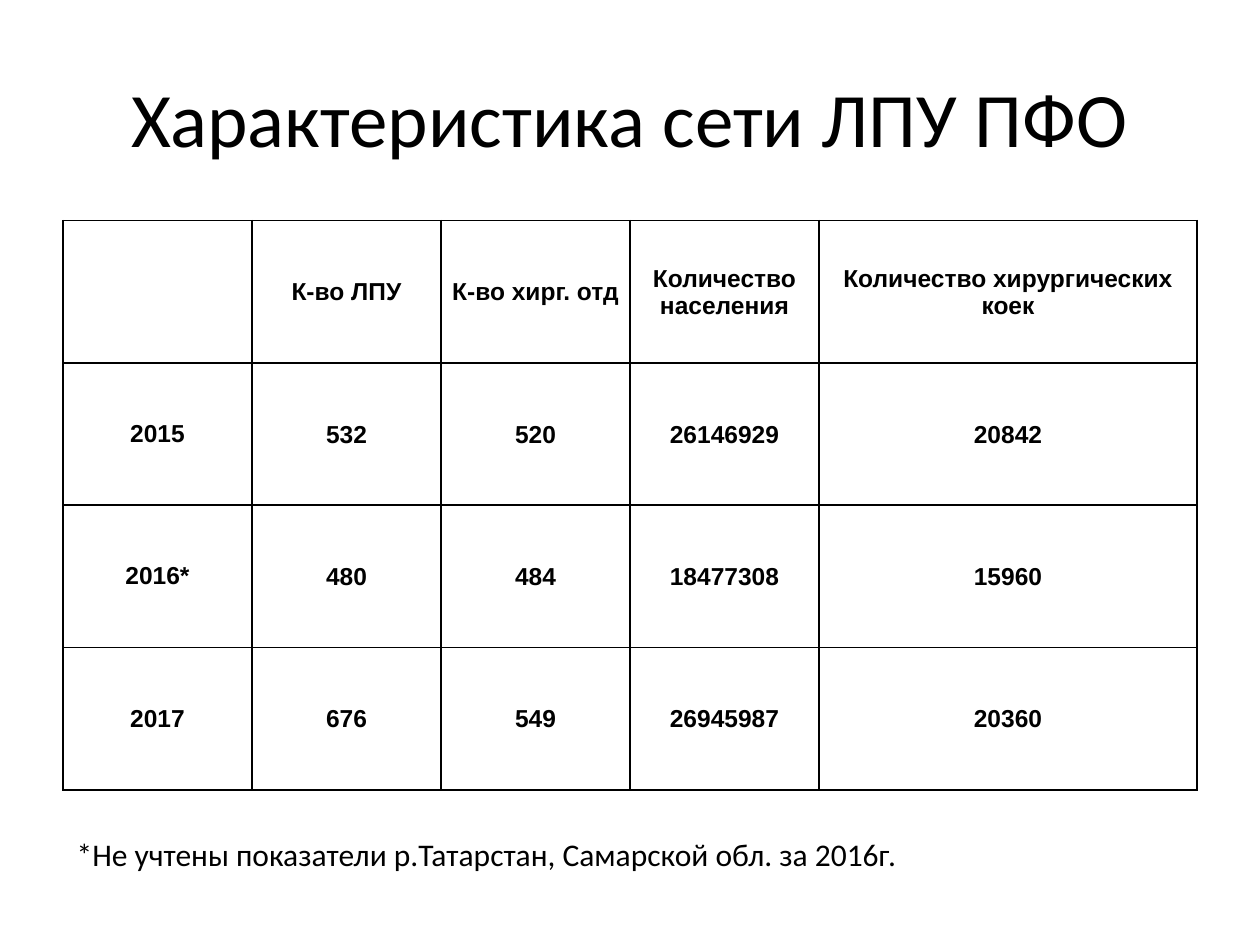
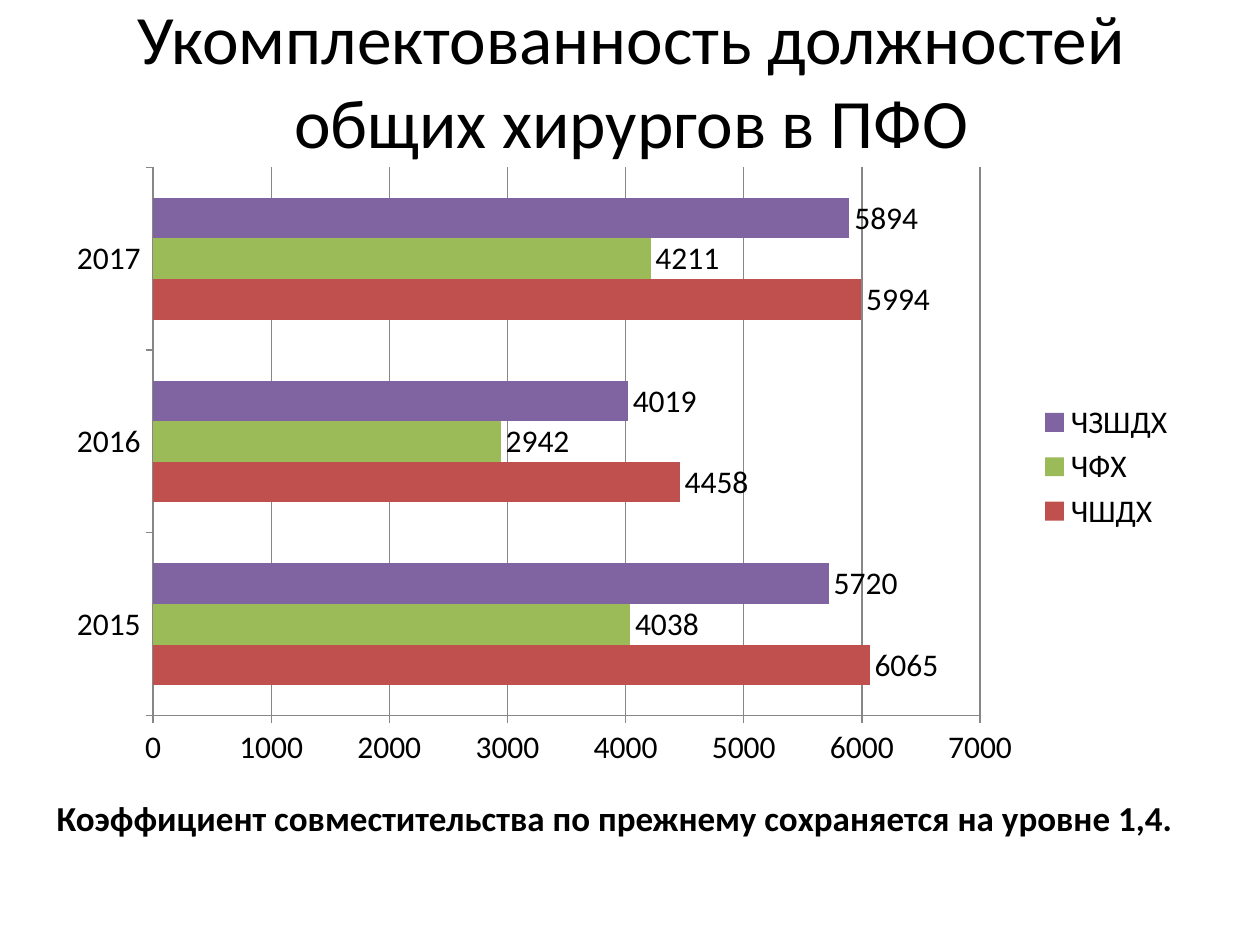
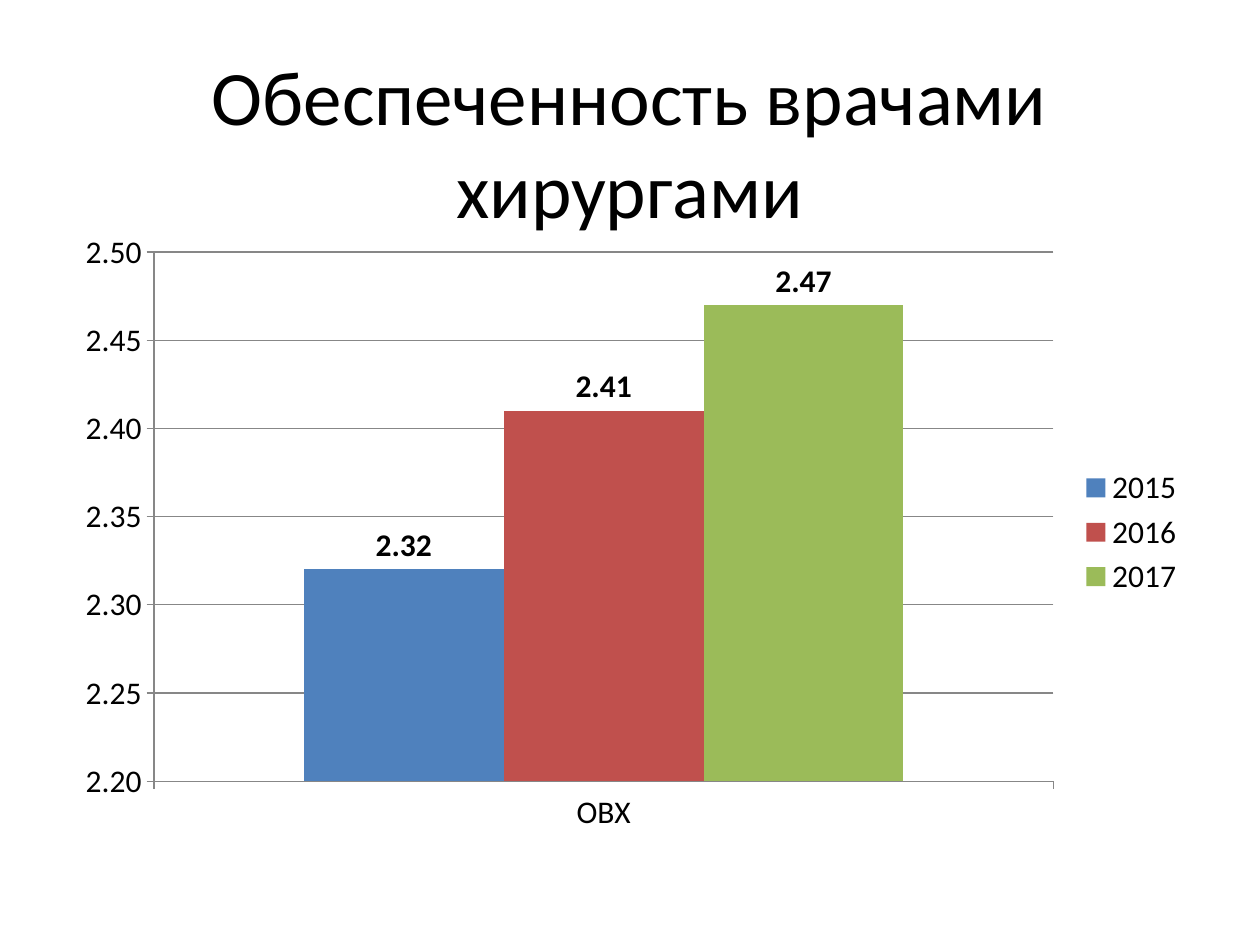
"""Build three slides on the surgical service: a table of the network and two staffing charts."""
from dataclasses import dataclass
from typing import Optional

from lxml.etree import SubElement
from pptx import Presentation
from pptx.chart.data import CategoryChartData
from pptx.dml.color import RGBColor
from pptx.enum.chart import XL_CHART_TYPE as ChartType
from pptx.enum.chart import XL_LABEL_POSITION as LabelPosition
from pptx.enum.chart import XL_LEGEND_POSITION as LegendPosition
from pptx.enum.chart import XL_TICK_MARK as TickMark
from pptx.enum.text import MSO_ANCHOR as Anchor
from pptx.enum.text import PP_ALIGN as Align
from pptx.oxml.ns import qn
from pptx.util import Inches, Pt


@dataclass(frozen=True)
class Theme:
    font: str = "Calibri"
    table_font: str = "Arial"
    ink: str = "000000"
    paper: str = "FFFFFF"
    axis: str = "878787"
    blue: str = "4F81BD"
    red: str = "C0504D"
    green: str = "9BBB59"
    purple: str = "8064A2"
    title: float = 44
    long_title: float = 39.6
    remark: float = 20
    body: float = 18
    cell: float = 14
    border: float = 1
    hairline: float = 0.75


THEME = Theme()


@dataclass(frozen=True)
class Area:
    left: float
    top: float
    width: float
    height: float

    def lengths(self) -> tuple:
        return tuple(map(Inches, (self.left, self.top, self.width, self.height)))


@dataclass(frozen=True)
class Caption:
    text: str
    area: Area
    size: float
    bold: bool = False
    align: Align = Align.LEFT
    anchor: Anchor = Anchor.TOP


@dataclass(frozen=True)
class Series:
    name: str
    values: tuple
    color: str


@dataclass(frozen=True)
class ChartPlan:
    kind: ChartType
    area: Area
    categories: tuple
    series: tuple
    number_format: str
    scale: tuple
    bold_labels: bool = False


@dataclass(frozen=True)
class TablePlan:
    area: Area
    column_widths: tuple
    rows: tuple


@dataclass(frozen=True)
class PagePlan:
    title: Caption
    table: Optional[TablePlan] = None
    chart: Optional[ChartPlan] = None
    note: Optional[Caption] = None


def title(text: str, area: Area, size: float = THEME.title) -> Caption:
    return Caption(text, area, size, align=Align.CENTER, anchor=Anchor.MIDDLE)


def style_font(font, size: float, bold: bool = False, name: str = THEME.font) -> None:
    font.name, font.size, font.bold = name, Pt(size), bold
    font.color.rgb = RGBColor.from_string(THEME.ink)


def draw_caption(page, caption: Caption) -> None:
    frame = page.shapes.add_textbox(*caption.area.lengths()).text_frame
    frame.word_wrap = True
    frame.vertical_anchor = caption.anchor
    frame.text = caption.text
    para = frame.paragraphs[0]
    para.alignment = caption.align
    style_font(para.runs[0].font, caption.size, caption.bold)


def draw_borders(cell) -> None:
    properties = cell._tc.get_or_add_tcPr()
    for position, side in enumerate(("a:lnL", "a:lnR", "a:lnT", "a:lnB")):
        line = SubElement(properties, qn(side), w=str(Pt(THEME.border)))
        fill = SubElement(line, qn("a:solidFill"))
        SubElement(fill, qn("a:srgbClr"), val=THEME.ink)
        properties.insert(position, line)


def draw_table(page, plan: TablePlan) -> None:
    table = page.shapes.add_table(
        len(plan.rows), len(plan.column_widths), *plan.area.lengths()).table
    table.first_row = table.horz_banding = False
    for column, width in zip(table.columns, plan.column_widths):
        column.width = Inches(width)
    for row_index, row in enumerate(plan.rows):
        for column_index, text in enumerate(row):
            cell = table.cell(row_index, column_index)
            cell.fill.solid()
            cell.fill.fore_color.rgb = RGBColor.from_string(THEME.paper)
            draw_borders(cell)
            cell.vertical_anchor = Anchor.MIDDLE
            if column_index:
                cell.margin_left = cell.margin_right = cell.margin_top = Inches(0.01)
                cell.margin_bottom = Inches(0)
            cell.text_frame.text = text
            para = cell.text_frame.paragraphs[0]
            para.alignment = Align.CENTER
            for span in para.runs:
                style_font(span.font, THEME.cell, True, THEME.table_font)


def style_line(line) -> None:
    line.color.rgb = RGBColor.from_string(THEME.axis)
    line.width = Pt(THEME.hairline)


def draw_chart(page, plan: ChartPlan) -> None:
    data = CategoryChartData(number_format=plan.number_format)
    data.categories = plan.categories
    for series in plan.series:
        data.add_series(series.name, series.values)
    chart = page.shapes.add_chart(plan.kind, *plan.area.lengths(), data).chart
    chart.has_title = False
    style_font(chart.font, THEME.body)
    chart.has_legend = True
    chart.legend.position = LegendPosition.RIGHT
    chart.legend.include_in_layout = False

    for axis in (chart.category_axis, chart.value_axis):
        axis.major_tick_mark, axis.minor_tick_mark = TickMark.OUTSIDE, TickMark.NONE
        style_line(axis.format.line)
    values = chart.value_axis
    values.minimum_scale, values.maximum_scale, values.major_unit = plan.scale
    values.has_major_gridlines = True
    style_line(values.major_gridlines.format.line)
    values.tick_labels.number_format = plan.number_format
    values.tick_labels.number_format_is_linked = False

    plot = chart.plots[0]
    plot.gap_width, plot.overlap, plot.vary_by_categories = 150, 0, False
    for bars, series in zip(plot.series, plan.series):
        bars.format.fill.solid()
        bars.format.fill.fore_color.rgb = RGBColor.from_string(series.color)
        labels = bars.data_labels
        labels.show_value = True
        labels.position = LabelPosition.OUTSIDE_END
        labels.number_format = plan.number_format
        labels.number_format_is_linked = False
        style_font(labels.font, THEME.body, plan.bold_labels)


def draw_page(deck, plan: PagePlan) -> None:
    page = deck.slides.add_slide(deck.slide_layouts[6])
    draw_caption(page, plan.title)
    if plan.table:
        draw_table(page, plan.table)
    if plan.chart:
        draw_chart(page, plan.chart)
    if plan.note:
        draw_caption(page, plan.note)


PAGES = (
    PagePlan(
        title("Характеристика сети ЛПУ ПФО", Area(0.5, 0.3, 9, 1.25)),
        table=TablePlan(
            Area(0.5, 1.75, 9, 4.52),
            (1.5, 1.5, 1.5, 1.5, 3),
            (
                ("", "К-во ЛПУ", "К-во хирг. отд", "Количество населения",
                 "Количество хирургических коек"),
                ("2015", "532", "520", "26146929", "20842"),
                ("2016*", "480", "484", "18477308", "15960"),
                ("2017", "676", "549", "26945987", "20360"),
            ),
        ),
        note=Caption("*Не учтены показатели р.Татарстан, Самарской обл. за 2016г.",
                     Area(0.51, 6.58, 9.06, 0.4), THEME.body),
    ),
    PagePlan(
        title("Укомплектованность должностей общих хирургов в ПФО",
              Area(0.51, 0, 9, 1.25), THEME.long_title),
        chart=ChartPlan(
            ChartType.BAR_CLUSTERED, Area(0.43, 1.23, 9, 4.95),
            ("2015", "2016", "2017"),
            (
                Series("ЧШДХ", (6065, 4458, 5994), THEME.red),
                Series("ЧФХ", (4038, 2942, 4211), THEME.green),
                Series("ЧЗШДХ", (5720, 4019, 5894), THEME.purple),
            ),
            "0", (0, 7000, 1000),
        ),
        note=Caption("Коэффициент совместительства по прежнему сохраняется на уровне 1,4.",
                     Area(0.35, 6.27, 9.21, 0.44), THEME.remark, bold=True),
    ),
    PagePlan(
        title("Обеспеченность врачами хирургами", Area(0.5, 0.3, 9, 1.64)),
        chart=ChartPlan(
            ChartType.COLUMN_CLUSTERED, Area(0.5, 1.75, 9, 4.95),
            ("ОВХ",),
            (
                Series("2015", (2.32,), THEME.blue),
                Series("2016", (2.41,), THEME.red),
                Series("2017", (2.47,), THEME.green),
            ),
            "0.00", (2.2, 2.5, 0.05), bold_labels=True,
        ),
    ),
)


def main() -> None:
    deck = Presentation()
    deck.slide_width, deck.slide_height = Inches(10), Inches(7.5)
    for plan in PAGES:
        draw_page(deck, plan)
    deck.save("out.pptx")


if __name__ == "__main__":
    main()
